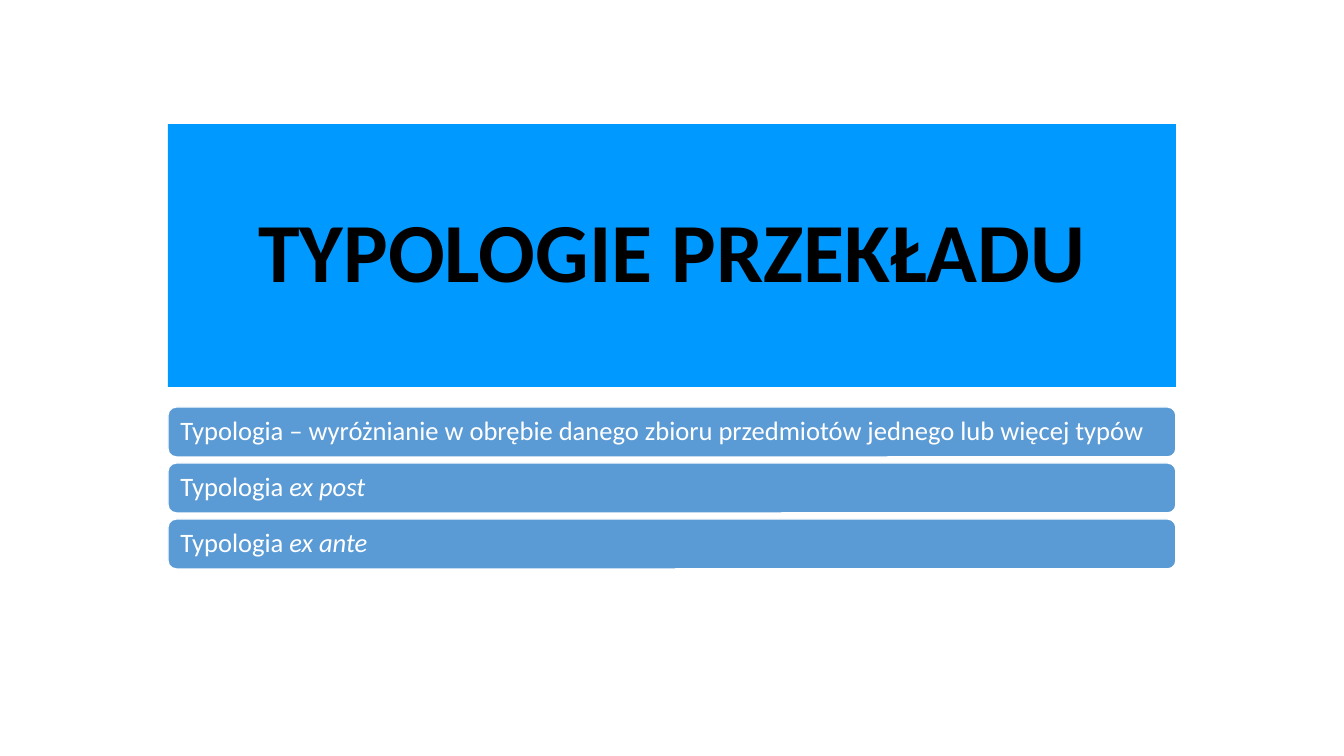
from pptx import Presentation
from pptx.dml.color import RGBColor as Rgb
from pptx.enum.shapes import MSO_SHAPE as Kind
from pptx.enum.text import MSO_ANCHOR as Anchor, PP_ALIGN as Align
from pptx.util import Pt

SCALE = 914400 / 100.8
FONT = "Calibri"
COLORS = {"title": "0099FF", "bar": "5B9BD5", "dark": "000000", "light": "FFFFFF"}
BARS = [
    ("Typologia – wyróżnianie w obrębie danego zbioru przedmiotów jednego lub więcej typów", ""),
    ("Typologia ", "ex post"),
    ("Typologia ", "ex ante"),
]
LEFT, WIDTH = 168, 1008
TOP, STEP, HEIGHT = 407, 56, 50


def px(n):
    return round(n * SCALE)


def tint(name):
    return Rgb.from_string(COLORS[name])


class Deck:
    """Holds the style and the current slide, and draws its elements."""

    def __init__(self, width, height):
        self.file = Presentation()
        self.file.slide_width, self.file.slide_height = px(width), px(height)
        self.slide = self.file.slides.add_slide(self.file.slide_layouts[6])

    def box(self, kind, area, fill):
        shape = self.slide.shapes.add_shape(kind, *map(px, area))
        shape.shadow.inherit = False
        shape.fill.solid()
        shape.fill.fore_color.rgb = tint(fill)
        shape.line.fill.background()
        return shape

    def label(self, shape, text, size, color, align):
        frame = shape.text_frame
        frame.word_wrap = True
        frame.vertical_anchor = Anchor.MIDDLE
        frame.margin_left = frame.margin_right = px(10)
        para = frame.paragraphs[0]
        para.text = text
        para.alignment = align
        para.line_spacing = 0.9
        self.style(para.runs[0], size, color)
        return para

    def style(self, run, size, color):
        run.font.name = FONT
        run.font.size = Pt(size)
        run.font.color.rgb = tint(color)

    def title(self, text, area):
        shape = self.box(Kind.RECTANGLE, area, "title")
        para = self.label(shape, text, 60, "dark", Align.CENTER)
        para.runs[0].font.bold = True

    def bar(self, text, term, area):
        shape = self.box(Kind.ROUNDED_RECTANGLE, area, "bar")
        shape.line.color.rgb = tint("light")
        shape.line.width = Pt(1)
        para = self.label(shape, text, 19, "light", Align.LEFT)
        if term:
            run = para.add_run()
            run.text = term
            self.style(run, 19, "light")
            run.font.italic = True


def main():
    deck = Deck(1344, 756)
    deck.title("TYPOLOGIE PRZEKŁADU", (LEFT, 124, WIDTH, 263))
    for i, (text, term) in enumerate(BARS):
        deck.bar(text, term, (LEFT, TOP + i * STEP, WIDTH, HEIGHT))
    deck.file.save("out.pptx")


if __name__ == "__main__":
    main()
